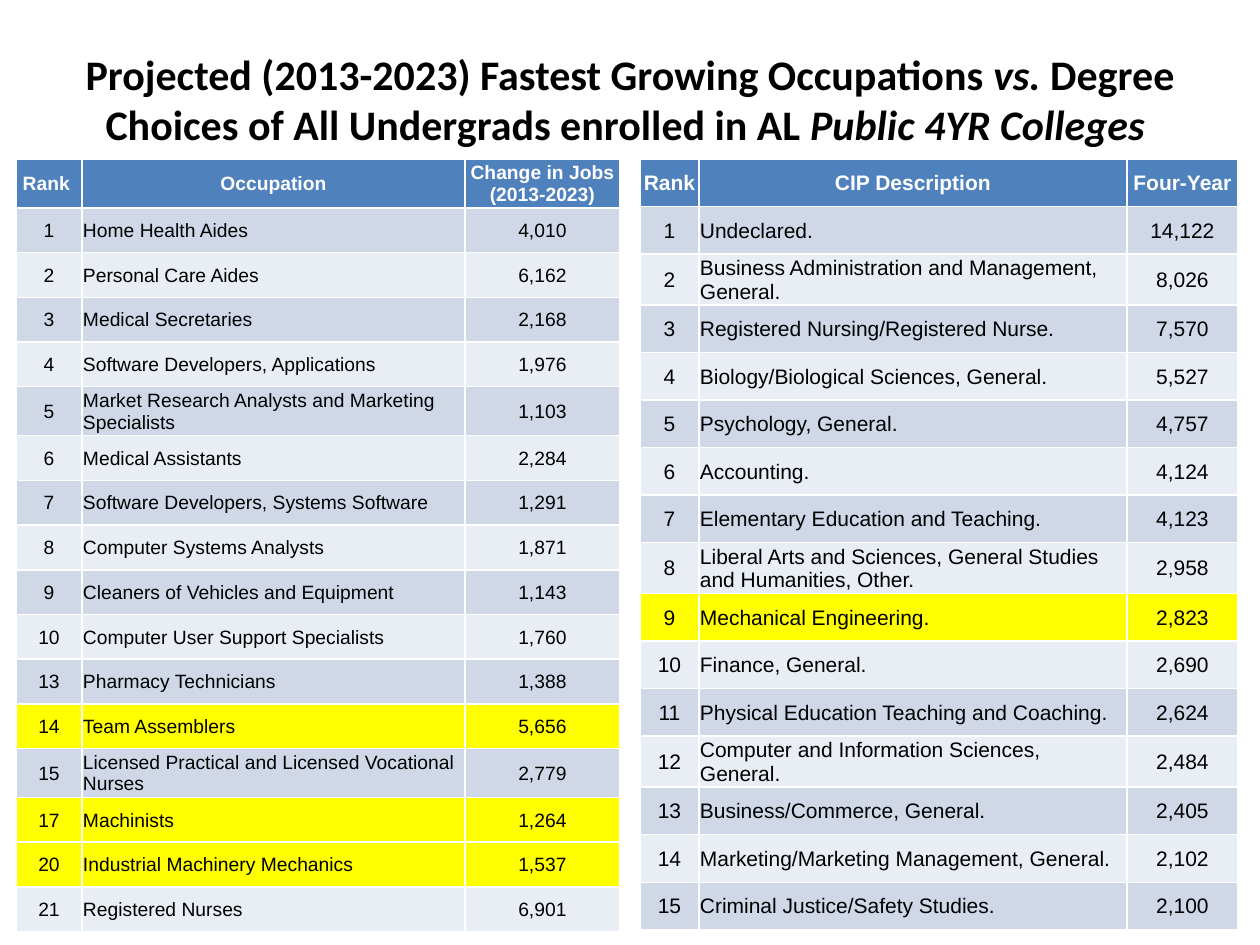
from pptx import Presentation
from pptx.dml.color import RGBColor
from pptx.enum.text import MSO_ANCHOR, PP_ALIGN
from pptx.util import Pt

PX = 914400 // 126
CENTER, LEFT = PP_ALIGN.CENTER, PP_ALIGN.LEFT
MIDDLE = MSO_ANCHOR.MIDDLE


def rgb(value):
    return RGBColor.from_string(value)


def add_run(p, text, font, size, color, bold=False, italic=False):
    r = p.add_run()
    r.text = text
    r.font.name = font
    r.font.size = Pt(size)
    r.font.color.rgb = rgb(color)
    r.font.bold = bold
    r.font.italic = italic


prs = Presentation()
prs.slide_width = 1260 * PX
prs.slide_height = 945 * PX
s = prs.slides.add_slide(prs.slide_layouts[5])

title = s.shapes.title
title.left, title.top, title.width, title.height = [v * PX for v in (63, 38, 1134, 121)]
tf = title.text_frame
tf.word_wrap = True
tf.vertical_anchor = MIDDLE
p = tf.paragraphs[0]
p.alignment = CENTER
for text, italic in [
    ("Projected (2013-2023) Fastest Growing Occupations ", False),
    ("vs.", True),
    (" Degree Choices of All Undergrads enrolled in AL ", False),
    ("Public 4YR Colleges ", True),
]:
    add_run(p, text, "Calibri", 24, "000000", bold=True, italic=italic)

occupations = [
    ("Rank ", "Occupation", "Change in Jobs (2013-2023)"),
    ("1", "Home Health Aides", "4,010"),
    ("2", "Personal Care Aides", "6,162"),
    ("3", "Medical Secretaries", "2,168"),
    ("4", "Software Developers, Applications", "1,976"),
    ("5", "Market Research Analysts and Marketing Specialists", "1,103"),
    ("6", "Medical Assistants", "2,284"),
    ("7", "Software Developers, Systems Software", "1,291"),
    ("8", "Computer Systems Analysts", "1,871"),
    ("9", "Cleaners of Vehicles and Equipment", "1,143"),
    ("10", "Computer User Support Specialists", "1,760"),
    ("13", "Pharmacy Technicians", "1,388"),
    ("14", "Team Assemblers", "5,656"),
    ("15", "Licensed Practical and Licensed Vocational Nurses", "2,779"),
    ("17", "Machinists", "1,264"),
    ("20", "Industrial Machinery Mechanics", "1,537"),
    ("21", "Registered Nurses", "6,901"),
]
degrees = [
    ("Rank", "CIP Description", "Four-Year"),
    ("1", "Undeclared.", "14,122"),
    ("2", "Business Administration and Management, General.", "8,026"),
    ("3", "Registered Nursing/Registered Nurse.", "7,570"),
    ("4", "Biology/Biological Sciences, General.", "5,527"),
    ("5", "Psychology, General.", "4,757"),
    ("6", "Accounting.", "4,124"),
    ("7", "Elementary Education and Teaching.", "4,123"),
    ("8", "Liberal Arts and Sciences, General Studies and Humanities, Other.", "2,958"),
    ("9", "Mechanical Engineering.", "2,823"),
    ("10", "Finance, General.", "2,690"),
    ("11", "Physical Education Teaching and Coaching.", "2,624"),
    ("12", "Computer and Information Sciences, General.", "2,484"),
    ("13", "Business/Commerce, General.", "2,405"),
    ("14", "Marketing/Marketing Management, General.", "2,102"),
    ("15", "Criminal Justice/Safety Studies.", "2,100"),
]

tables = [
    (occupations, 16, (66, 383, 155), 773, 49, (0, 5, 13), ("14", "17", "20"), 11),
    (degrees, 640, (59, 428, 111), 771, 51, (2, 8, 12), ("9",), 12),
]
for rows, left, widths, height, tall, tall_rows, marked, size in tables:
    table = s.shapes.add_table(
        len(rows), len(widths), left * PX, 159 * PX, sum(widths) * PX, height * PX
    ).table
    for col, width in zip(table.columns, widths):
        col.width = width * PX
    regular = (height - tall * len(tall_rows)) * PX // (len(rows) - len(tall_rows))
    for i, row in enumerate(rows):
        table.rows[i].height = tall * PX if i in tall_rows else regular
        header = i == 0
        if header:
            fill = "4F81BD"
        elif row[0] in marked:
            fill = "FFFF00"
        else:
            fill = "D0D8E8" if i % 2 else "E9EDF4"
        for j, text in enumerate(row):
            cell = table.cell(i, j)
            cell.fill.solid()
            cell.fill.fore_color.rgb = rgb(fill)
            cell.vertical_anchor = MIDDLE
            cell.margin_left = cell.margin_right = cell.margin_top = PX
            cell.margin_bottom = 0
            p = cell.text_frame.paragraphs[0]
            p.alignment = LEFT if j == 1 and not header else CENTER
            add_run(p, text, "Arial", size, "FFFFFF" if header else "000000", bold=header)

prs.save("out.pptx")
